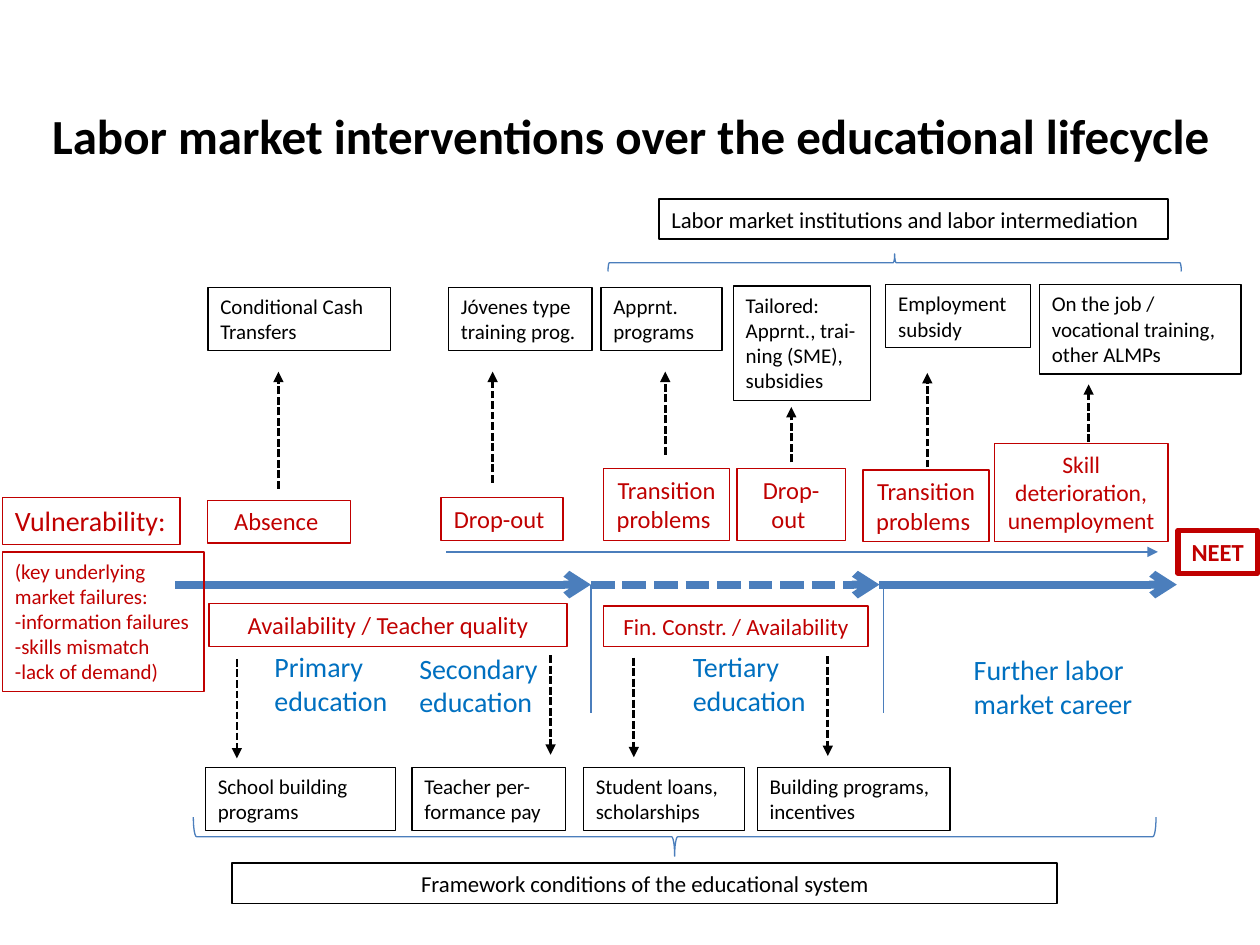
from dataclasses import dataclass

from lxml.etree import SubElement
from pptx import Presentation
from pptx.dml.color import RGBColor as RGB
from pptx.enum.dml import MSO_LINE_DASH_STYLE as Dash
from pptx.enum.shapes import MSO_CONNECTOR as Conn, MSO_SHAPE as Shape
from pptx.enum.text import MSO_AUTO_SIZE as AutoSize, PP_ALIGN as Align
from pptx.oxml.ns import qn
from pptx.util import Inches, Pt

COLS, ROWS = 100, 75


@dataclass(frozen=True)
class Theme:
    font: str = "Calibri"
    black: RGB = RGB(0x00, 0x00, 0x00)
    red: RGB = RGB(0xC0, 0x00, 0x00)
    blue: RGB = RGB(0x00, 0x70, 0xC0)
    steel: RGB = RGB(0x4B, 0x7E, 0xBC)
    title: float = 28
    stage: float = 16
    problem: float = 14
    frame: float = 13
    measure: float = 12
    thin: float = 0.75


T = Theme()


@dataclass(frozen=True)
class Box:
    text: str
    col: float
    row: float
    cols: float
    rows: float
    size: float = T.measure
    color: RGB = T.black
    border: float = T.thin
    centered: bool = False
    wrap: bool = True
    bold: bool = False
    grow: bool = True


@dataclass(frozen=True)
class Line:
    start: tuple[float, float]
    end: tuple[float, float]
    color: RGB = T.black
    width: float = 1.5
    dashed: bool = False
    head: str = ""


@dataclass(frozen=True)
class Brace:
    col: float
    row: float
    cols: float
    rows: float
    rotation: int
    curl: float


def problem(text: str, col: float, row: float, cols: float, rows: float,
            size: float = T.problem, **style) -> Box:
    """Describe a red, centred problem box."""
    return Box(text, col, row, cols, rows, size, T.red, centered=True, **style)


def stage(text: str, col: float, row: float, cols: float, wrap: bool = False) -> Box:
    """Describe a borderless blue label for a life stage."""
    return Box(text, col, row, cols, 6.4, T.stage, T.blue, 0, wrap=wrap)


def response(col: float, start: float, end: float) -> Line:
    """Describe a dashed vertical arrow from a problem to a measure."""
    return Line((col, start), (col, end), dashed=True, head="triangle")


AXIS = 46.4
STOPS = [13.9, 46.9, 69.8, 93.4]

LINES = [
    *(Line((a, AXIS), (b, AXIS), T.steel, 4.5, i == 1, "arrow")
      for i, (a, b) in enumerate(zip(STOPS, STOPS[1:]))),
    *(Line((col, AXIS), (col, 56.6), T.steel, T.thin) for col in (46.9, 70.1)),
    Line((35.4, 43.8), (91.9, 43.8), T.steel, head="triangle"),
    *(response(*a) for a in [
        (22.1, 38.8, 29.5), (39.1, 38.3, 29.5), (52.8, 36.1, 29.5),
        (62.8, 36.7, 32.3), (73.6, 37.1, 29.6), (86.4, 35.1, 30.5)]),
    *(response(col, row, row + 7.9) for col, row in [
        (18.8, 52.3), (43.7, 52), (50.3, 52.2), (65.7, 52.1)]),
]

BOXES = [
    Box("Labor market interventions over the educational lifecycle",
        2, 7.9, 96.1, 7.8, T.title, border=0, centered=True, bold=True, grow=False),
    stage("Primary\neducation", 20.8, 51.1, 11.1),
    stage("Secondary\neducation", 32.3, 51.2, 12),
    stage("Tertiary\neducation", 54, 51.1, 11.1),
    stage("Further labor\nmarket career", 76.3, 51.3, 22, wrap=True),
    Box("Vulnerability:", 0.2, 39.5, 14.1, 3.7, T.stage, T.red, wrap=False),
    Box("(key underlying\nmarket failures:\n-information failures\n-skills mismatch\n-lack of demand)",
        0.2, 43.8, 16, 11.1, color=T.red, wrap=False),
    problem("Absence ", 16.5, 39.7, 11.3, 3.4),
    problem("Drop-out ", 35, 39.5, 9.7, 3.4, wrap=False),
    problem("Transition\nproblems ", 47.9, 37.2, 10, 5.7, wrap=False),
    problem("Drop-out ", 58.5, 37.2, 8.6, 5.7),
    problem("Transition\nproblems ", 68.5, 37.3, 10, 5.7),
    problem("Skill deterioration,\nunemployment", 78.9, 35.2, 13.8, 7.8, 13.5),
    problem("NEET", 93.5, 42.1, 6.3, 3.4, border=3, bold=True),
    problem("Availability / Teacher quality", 16.6, 47.9, 28.4, 3.4),
    problem("Fin. Constr. / Availability", 47.9, 48.1, 21, 3.2, 13.2),
    Box("Conditional Cash Transfers", 16.5, 22.8, 14.5, 5),
    Box("Jóvenes type training prog.", 35.6, 22.8, 11.4, 5),
    Box("Apprnt.\nprograms", 47.7, 22.8, 9.6, 5),
    Box("Tailored:\nApprnt., trai-ning (SME), subsidies", 58.2, 22.7, 10.9, 9.1),
    Box("Employment subsidy", 70.3, 22.6, 11.5, 5),
    Box("On the job / vocational training,\nother ALMPs", 82.5, 22.6, 16, 7.1),
    Box("School building programs", 16.3, 60.9, 15.1, 5),
    Box("Teacher per-formance pay", 32.7, 60.9, 12.2, 5),
    Box("Student loans, scholarships", 46.3, 60.9, 12.8, 5),
    Box("Building programs, incentives", 60.1, 60.9, 15.3, 5),
    Box("Labor market institutions and labor intermediation",
        52.3, 15.8, 40.4, 3.2, T.frame, border=1),
    Box("Framework conditions of the educational system",
        18.4, 68.5, 65.5, 3.2, T.frame, border=1, centered=True),
]

BRACES = [Brace(70.3, -1.9, 1.4, 45.5, 90, 0.08), Brace(52, 28.2, 3.1, 76.4, 270, 0.08)]


def place(prs, *cells: float) -> list[int]:
    """Turn alternating column and row values into slide lengths."""
    units = (prs.slide_width / COLS, prs.slide_height / ROWS)
    return [round(cell * units[i % 2]) for i, cell in enumerate(cells)]


def draw_box(prs, s, box: Box) -> None:
    """Draw a text box with an optional border."""
    sp = s.shapes.add_textbox(*place(prs, box.col, box.row, box.cols, box.rows))
    if box.border:
        sp.line.color.rgb = box.color
        sp.line.width = Pt(box.border)
    tf = sp.text_frame
    tf.text = box.text
    tf.word_wrap = box.wrap
    tf.auto_size = AutoSize.SHAPE_TO_FIT_TEXT if box.grow else AutoSize.NONE
    for p in tf.paragraphs:
        p.alignment = Align.CENTER if box.centered else Align.LEFT
        for r in p.runs:
            r.font.name, r.font.size, r.font.bold = T.font, Pt(box.size), box.bold
            r.font.color.rgb = box.color


def draw_line(prs, s, line: Line) -> None:
    """Draw a straight line with optional dashes and arrowhead."""
    sp = s.shapes.add_connector(Conn.STRAIGHT, *place(prs, *line.start, *line.end))
    sp.line.color.rgb = line.color
    sp.line.width = Pt(line.width)
    if line.dashed:
        sp.line.dash_style = Dash.SQUARE_DOT
    if line.head:
        SubElement(sp.line._get_or_add_ln(), qn("a:tailEnd"), type=line.head)
    SubElement(sp._element.spPr, qn("a:effectLst"))


def draw_brace(prs, s, brace: Brace) -> None:
    """Draw a brace turned to span a row of boxes."""
    sp = s.shapes.add_shape(
        Shape.LEFT_BRACE, *place(prs, brace.col, brace.row, brace.cols, brace.rows))
    sp.rotation = brace.rotation
    sp.adjustments[0] = brace.curl
    sp.fill.background()
    sp.line.color.rgb = T.steel
    sp.line.width = Pt(T.thin)
    sp.shadow.inherit = False


def main() -> None:
    """Build and save the slide."""
    prs = Presentation()
    prs.slide_width, prs.slide_height = Inches(10), Inches(7.5)
    s = prs.slides.add_slide(prs.slide_layouts[6])
    for draw, items in ((draw_line, LINES), (draw_box, BOXES), (draw_brace, BRACES)):
        for item in items:
            draw(prs, s, item)
    prs.save("out.pptx")


if __name__ == "__main__":
    main()
